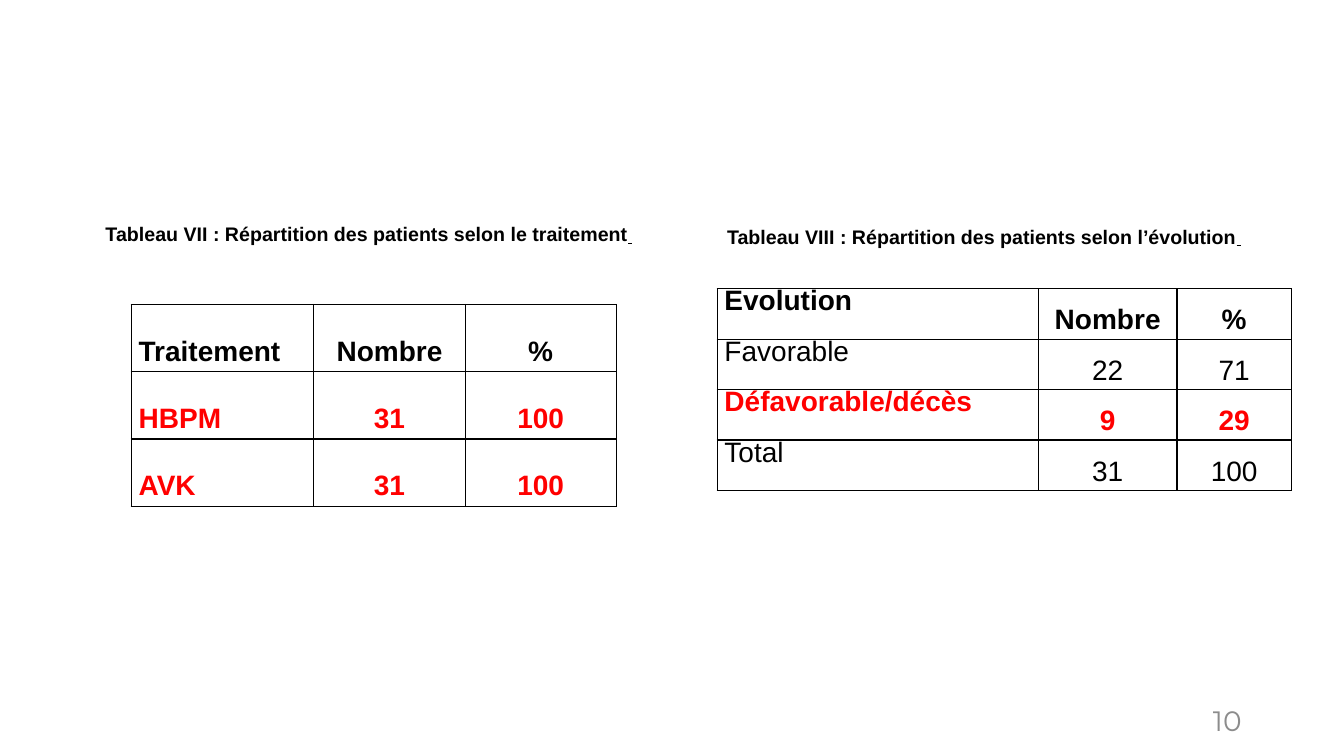
from dataclasses import dataclass
from typing import Any

from lxml.etree import SubElement as Sub
from pptx import Presentation
from pptx.dml.color import RGBColor
from pptx.enum.text import MSO_ANCHOR as Anchor, MSO_AUTO_SIZE as Fit, PP_ALIGN as Align
from pptx.oxml.ns import qn
from pptx.util import Emu, Pt

PX = 9525
BLACK = RGBColor(0, 0, 0)
RED = RGBColor(255, 0, 0)
GREY = RGBColor(140, 140, 140)

BODY = {"name": "Arial", "size": Pt(20), "bold": False}
BOLD = BODY | {"bold": True}
HEAD = BOLD | {"size": Pt(14)}
TAIL = {"name": "Times New Roman", "size": Pt(12), "bold": True, "underline": True}
PAGE = {"name": "Montserrat", "size": Pt(20)}


@dataclass
class Row:
    texts: tuple[str, ...]
    color: RGBColor = BLACK
    bold: bool = True


@dataclass
class Grid:
    left: int
    top: int
    cols: tuple[int, ...]
    height: int
    first: Any
    rest: Any
    rows: list[Row]


@dataclass
class Title:
    left: int
    top: int
    width: int
    text: str


GRIDS = [
    Grid(125, 290, (174, 144, 144), 59, 2.0, 2.0, [
        Row(("Traitement", "Nombre", "%")),
        Row(("HBPM", "31", "100"), RED),
        Row(("AVK", "31", "100"), RED),
    ]),
    Grid(683, 275, (306, 132, 109), 44, Pt(20), 1.5, [
        Row(("Evolution", "Nombre", "%")),
        Row(("Favorable", "22", "71"), bold=False),
        Row(("Défavorable/décès", "9", "29"), RED),
        Row(("Total", "31", "100"), bold=False),
    ]),
]
TITLES = [
    Title(683, 209, 510, "Tableau VIII : Répartition des patients selon l’évolution"),
    Title(91, 207, 522, "Tableau VII : Répartition des patients selon le traitement"),
]


def px(*nums: int) -> list[Emu]:
    return [Emu(num * PX) for num in nums]


def put(obj: Any, form: dict[str, Any]) -> None:
    for key, val in form.items():
        setattr(obj, key, val)


def write(para: Any, text: str, form: dict[str, Any], color: RGBColor) -> None:
    run = para.add_run()
    run.text = text
    put(run.font, form)
    run.font.color.rgb = color


def frame(cell: Any) -> None:
    props = cell._tc.get_or_add_tcPr()
    for side in ("lnL", "lnR", "lnT", "lnB"):
        line = Sub(props, qn(f"a:{side}"), w=str(Pt(1)))
        Sub(Sub(line, qn("a:solidFill")), qn("a:srgbClr"), val=str(BLACK))
    cell.fill.background()


def draw_grid(slide: Any, grid: Grid) -> None:
    count = len(grid.rows)
    box = px(grid.left, grid.top, sum(grid.cols), grid.height * count)
    table = slide.shapes.add_table(count, len(grid.cols), *box).table
    put(table, {"first_row": False, "horz_banding": False})
    for col, width in zip(table.columns, px(*grid.cols)):
        col.width = width
    side, edge = px(7, 0)
    for y, row in enumerate(grid.rows):
        for x, text in enumerate(row.texts):
            cell = table.cell(y, x)
            put(cell, {"margin_left": side, "margin_right": side,
                       "margin_top": edge, "margin_bottom": edge})
            para = cell.text_frame.paragraphs[0]
            put(para, {"alignment": Align.CENTER if x else Align.LEFT,
                       "line_spacing": grid.rest if x else grid.first,
                       "space_after": Pt(8)})
            write(para, text, BOLD if row.bold else BODY, row.color)
            frame(cell)


def draw_title(slide: Any, title: Title) -> None:
    box = slide.shapes.add_textbox(*px(title.left, title.top, title.width, 33))
    put(box.text_frame, {"word_wrap": False, "auto_size": Fit.SHAPE_TO_FIT_TEXT})
    para = box.text_frame.paragraphs[0]
    write(para, title.text, HEAD, BLACK)
    write(para, " ", TAIL, BLACK)


def draw_page(slide: Any) -> None:
    box = slide.shapes.add_textbox(*px(904, 667, 288, 38))
    put(box.text_frame, {"word_wrap": True, "vertical_anchor": Anchor.MIDDLE})
    para = box.text_frame.paragraphs[0]
    para.alignment = Align.RIGHT
    write(para, "10", PAGE, GREY)


def main() -> None:
    deck = Presentation()
    deck.slide_width, deck.slide_height = px(1280, 720)
    slide = deck.slides.add_slide(deck.slide_layouts[6])
    draw_page(slide)
    for grid in GRIDS:
        draw_grid(slide, grid)
    for title in TITLES:
        draw_title(slide, title)
    deck.save("out.pptx")


if __name__ == "__main__":
    main()
